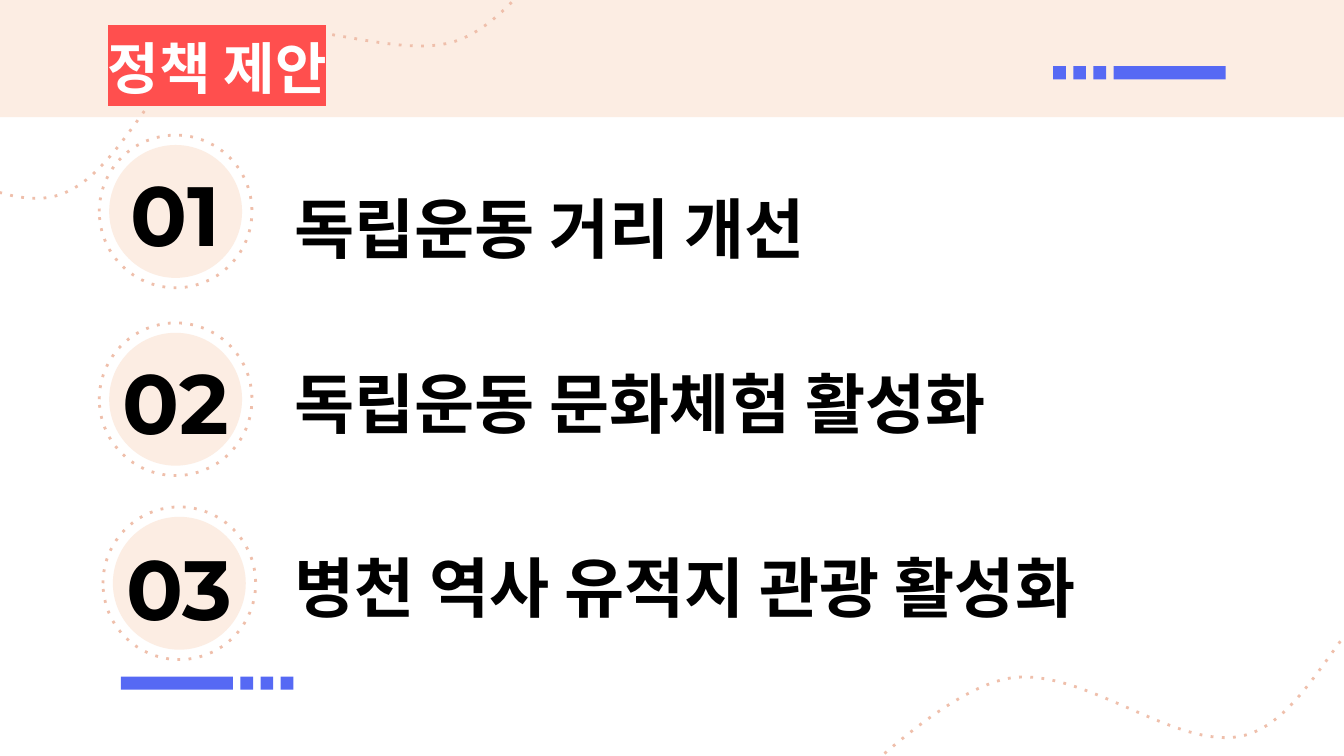
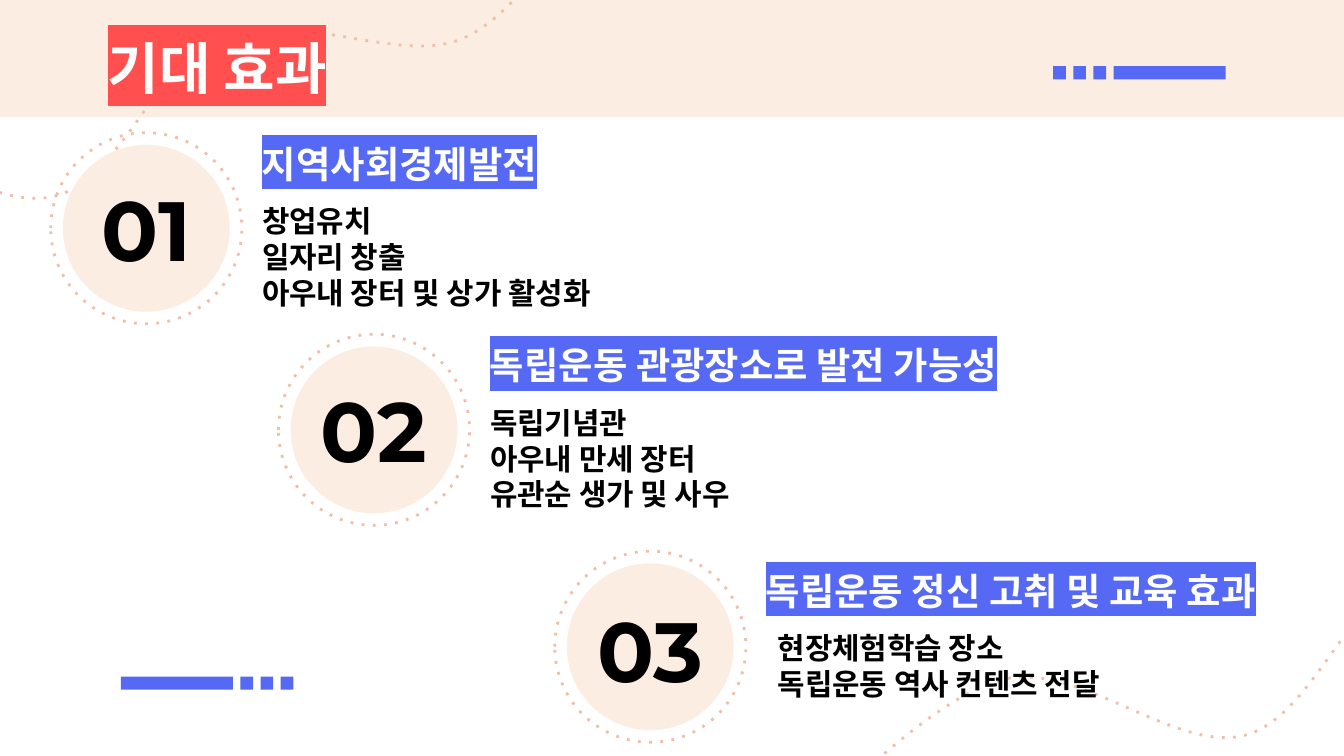
from pptx import Presentation
from pptx.dml.color import RGBColor
from pptx.enum.dml import MSO_LINE
from pptx.enum.shapes import MSO_SHAPE
from pptx.enum.text import MSO_ANCHOR, MSO_AUTO_SIZE, PP_ALIGN
from pptx.oxml.ns import qn
from pptx.util import Pt
from lxml import etree

RECTANGLE = MSO_SHAPE.RECTANGLE
OVAL = MSO_SHAPE.OVAL
ROUND_DOT = MSO_LINE.ROUND_DOT
TOP = MSO_ANCHOR.TOP
NO_AUTOFIT = MSO_AUTO_SIZE.NONE
LEFT = PP_ALIGN.LEFT
CENTER = PP_ALIGN.CENTER

COLORS = {
    "white": "FFFFFF",
    "black": "000000",
    "cream": "FCEDE3",
    "dots": "EFBFAB",
    "blue": "5669F4",
    "red": "FF4F4E",
}
HEADING_FONT = "Montserrat"
DETAIL_FONT = "League Spartan"
COMPARISON_LAYOUT = 4
INSET = 7.2
CURVE_POINTS = [
    (-212.4, 159.1),
    (-193.7, 144.7), (-139, 84.2), (-98.6, 74.9),
    (-58.3, 66.2), (-7.2, 114.5), (29.5, 105.1),
    (65.5, 95.8), (83.5, 32.4), (119.5, 18.7),
    (155.5, 5), (212.4, 33.8), (245.5, 21.6),
    (278.6, 9.4), (305.3, -42.5), (317.5, -54.7),
]
BAR_WIDTH = 60
SQUARE_WIDTH = 6.8
SQUARE_PITCH = 10.8
MARK_WIDTH = 3 * SQUARE_PITCH + BAR_WIDTH

PROPOSALS = [
    ("01", "독립운동 거리 개선", (53.2, 72.4), 79.9, (150.5, 93.6, 414, 34.6)),
    ("02", "독립운동 문화체험 활성화", (53.2, 173), 180.7, (150.5, 187.2, 489.6, 34.6)),
    ("03", "병천 역사 유적지 관광 활성화", (55.2, 271.6), 280.1,
     (150.5, 285.8, 551.5, 34.6)),
]
EFFECTS = [
    ("01", "지역사회경제발전",
     ["창업유치", "일자리 창출", "아우내 장터 및 상가 활성화"],
     (27.2, 71.1), 87.8, (133.2, 68.4, 195.1, 34.6), (133.2, 101.5, 221, 41)),
    ("02", "독립운동 관광장소로 발전 가능성",
     ["독립기념관", "아우내 만세 장터", "유관순 생가 및 사우"],
     (149.2, 179.1), 195.6, (255.4, 176.2, 414, 34.6), (255.4, 209.5, 195.1, 41)),
    ("03", "독립운동 정신 고취 및 교육 효과",
     ["현장체험학습 장소", "독립운동 역사 컨텐츠 전달"],
     (297.2, 295.3), 313.4, (403.2, 297.1, 357.8, 34.6), (409.5, 330.2, 234.7, 41)),
]


def color(name):
    return RGBColor.from_string(COLORS[name])


def add_filled(shapes, kind, left, top, width, height, fill):
    shape = shapes.add_shape(kind, Pt(left), Pt(top), Pt(width), Pt(height))
    shape.shadow.inherit = False
    shape.fill.solid()
    shape.fill.fore_color.rgb = color(fill)
    shape.line.fill.background()


def make_dotted(shape):
    shape.shadow.inherit = False
    shape.fill.background()
    shape.line.color.rgb = color("dots")
    shape.line.width = Pt(1.5)
    shape.line.dash_style = ROUND_DOT
    shape._element.spPr.find(".//" + qn("a:prstDash")).set("val", "dot")


def add_dotted_curve(slide, shift_x, shift_y):
    start, *points = [(Pt(x + shift_x), Pt(y + shift_y)) for x, y in CURVE_POINTS]
    builder = slide.shapes.build_freeform(*start)
    builder.add_line_segments(points, close=False)
    shape = builder.convert_to_shape()
    make_dotted(shape)
    outline = shape._element.spPr.find(".//" + qn("a:path"))
    segments = outline.findall(qn("a:lnTo"))
    for index in range(0, len(segments), 3):
        bezier = etree.SubElement(outline, qn("a:cubicBezTo"))
        for segment in segments[index:index + 3]:
            bezier.append(segment[0])
            outline.remove(segment)


def add_bar_mark(slide, left, top, mirrored):
    pieces = [(index * SQUARE_PITCH, SQUARE_WIDTH) for index in range(3)]
    pieces.insert(0, (3 * SQUARE_PITCH, BAR_WIDTH))
    group = slide.shapes.add_group_shape()
    for offset, width in pieces:
        if mirrored:
            offset = MARK_WIDTH - offset - width
        add_filled(group.shapes, RECTANGLE, left + offset, top, width, 7, "blue")


def add_highlight(run, name):
    highlight = etree.SubElement(run._r.get_or_add_rPr(), qn("a:highlight"))
    etree.SubElement(highlight, qn("a:srgbClr")).set("val", COLORS[name])


def write_text(shape, lines, *, box, size, font=HEADING_FONT, ink="black",
               highlight=None, align=LEFT):
    shape.left, shape.top, shape.width, shape.height = (Pt(value) for value in box)
    frame = shape.text_frame
    frame.word_wrap = True
    frame.auto_size = NO_AUTOFIT
    frame.vertical_anchor = TOP
    frame.margin_left = frame.margin_right = Pt(INSET)
    frame.margin_top = frame.margin_bottom = Pt(INSET)
    for index, line in enumerate(lines):
        paragraph = frame.add_paragraph() if index else frame.paragraphs[0]
        paragraph.alignment = align
        paragraph.space_before = Pt(0)
        properties = paragraph._p.get_or_add_pPr()
        properties.set("marL", "0")
        properties.set("indent", "0")
        etree.SubElement(properties, qn("a:buNone"))
        run = paragraph.add_run()
        run.text = line
        run.font.size = Pt(size)
        run.font.bold = True
        run.font.color.rgb = color(ink)
        if highlight:
            add_highlight(run, highlight)
        run.font.name = font


def add_text(slide, lines, **text_format):
    write_text(slide.shapes.add_textbox(0, 0, 0, 0), lines, **text_format)


def fill_placeholder(slide, placeholder, lines, **text_format):
    slide.shapes._spTree.append(placeholder._element)
    write_text(placeholder, lines, **text_format)


def add_badges(slide, corners, size, rim):
    for left, top in corners:
        make_dotted(slide.shapes.add_shape(OVAL, Pt(left), Pt(top), Pt(size), Pt(size)))
    disc = size - 2 * rim
    for left, top in corners:
        add_filled(slide.shapes, OVAL, left + rim, top + rim, disc, disc, "cream")


def add_number(slide, number, left, top, badge_size):
    add_text(slide, [number], size=45, align=CENTER,
             box=(left - 0.03 * badge_size, top, 1.06 * badge_size, 0.78 * badge_size))


def start_slide(presentation):
    slide = presentation.slides.add_slide(presentation.slide_layouts[COMPARISON_LAYOUT])
    slide.background.fill.solid()
    slide.background.fill.fore_color.rgb = color("white")
    add_filled(slide.shapes, RECTANGLE, -0.4, 0, 720.6, 62.8, "cream")
    add_dotted_curve(slide, 0, 0)
    add_dotted_curve(slide, 637.2, 288.9)
    add_bar_mark(slide, 564.2, 35.5, mirrored=False)
    add_bar_mark(slide, 64.8, 362.5, mirrored=True)
    *bodies, spare = [item for item in slide.placeholders if item.placeholder_format.idx]
    spare._element.getparent().remove(spare._element)
    return slide, bodies


def fill_title(slide, title):
    fill_placeholder(slide, slide.shapes.title, [title], box=(50.6, 10.8, 147.6, 45.4),
                     size=30, ink="white", highlight="red")


def build_proposals(presentation):
    slide, bodies = start_slide(presentation)
    badge_size = 81.8
    add_badges(slide, [row[2] for row in PROPOSALS], badge_size, rim=5.3)
    fill_title(slide, "정책 제안")
    for body, (number, text, corner, number_top, box) in zip(bodies, PROPOSALS):
        add_number(slide, number, corner[0], number_top, badge_size)
        fill_placeholder(slide, body, [text], box=box, size=35, highlight="white")


def build_effects(presentation):
    slide, bodies = start_slide(presentation)
    badge_size = 102.4
    add_badges(slide, [row[3] for row in EFFECTS], badge_size, rim=6.5)
    fill_title(slide, "기대 효과")
    for body, effect in zip(bodies, EFFECTS):
        number, heading, details, corner, number_top, heading_box, detail_box = effect
        fill_placeholder(slide, body, details, box=detail_box, size=16, font=DETAIL_FONT)
        add_number(slide, number, corner[0], number_top, badge_size)
        add_text(slide, [heading], box=heading_box, size=20, ink="white", highlight="blue")


def main():
    presentation = Presentation()
    presentation.slide_width = Pt(720)
    presentation.slide_height = Pt(405)
    build_proposals(presentation)
    build_effects(presentation)
    presentation.save("out.pptx")


if __name__ == "__main__":
    main()
